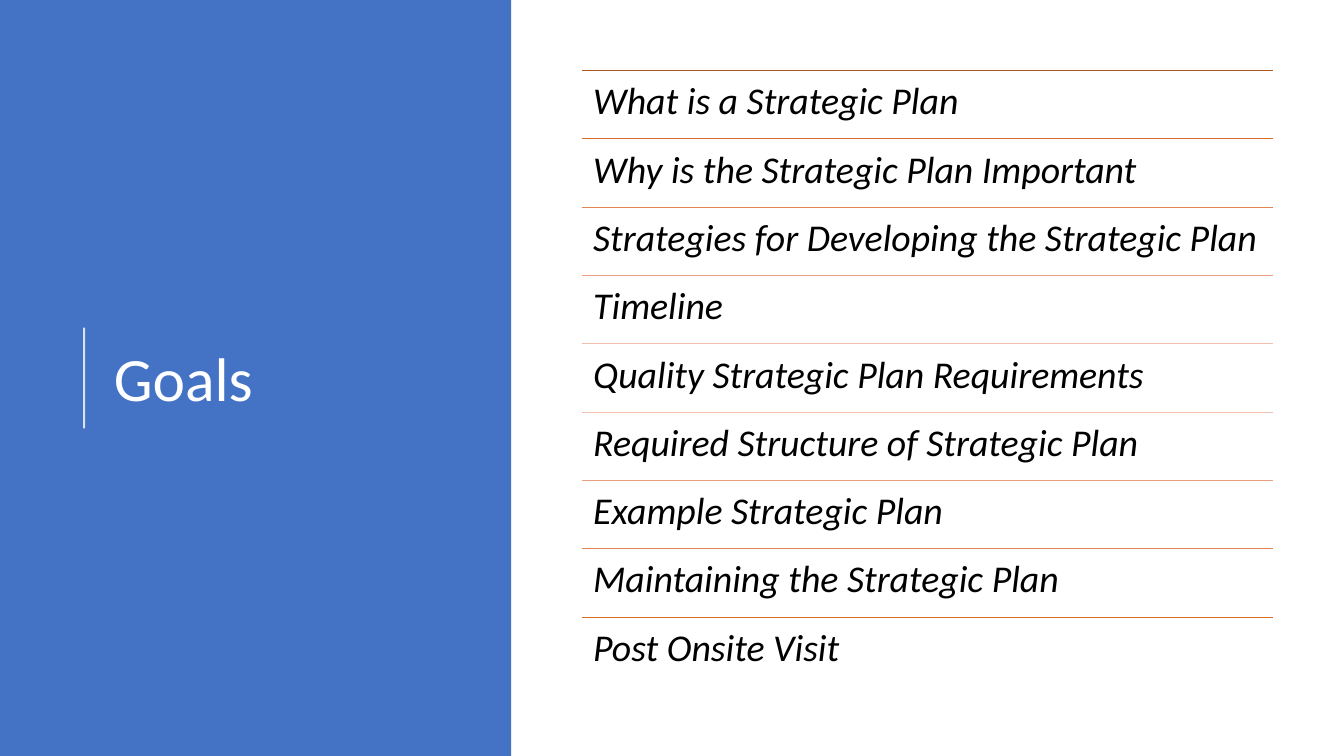
from dataclasses import dataclass

from lxml import etree
from pptx import Presentation
from pptx.dml.color import RGBColor
from pptx.enum.shapes import MSO_CONNECTOR, MSO_SHAPE
from pptx.enum.text import MSO_ANCHOR
from pptx.oxml.ns import qn
from pptx.util import Cm, Pt

STRAIGHT = MSO_CONNECTOR.STRAIGHT
RECTANGLE = MSO_SHAPE.RECTANGLE
TOP, MIDDLE = MSO_ANCHOR.TOP, MSO_ANCHOR.MIDDLE


@dataclass(frozen=True)
class Theme:
    font: str = "Calibri"
    panel: str = "4472C4"
    light: str = "FFFFFF"
    dark: str = "000000"
    dividers: tuple = ("AC5A20", "D76B2A", "E18454", "EAA080", "F3BFAD",
                       "F3BFAD", "EAA080", "E18454", "D76B2A")
    title_size: float = 44
    goal_size: float = 27


THEME = Theme()
SLIDE_WIDTH, SLIDE_HEIGHT = 33.87, 19.05
GOALS = (
    "What is a Strategic Plan",
    "Why is the Strategic Plan Important",
    "Strategies for Developing the Strategic Plan",
    "Timeline",
    "Quality Strategic Plan Requirements",
    "Required Structure of Strategic Plan",
    "Example Strategic Plan",
    "Maintaining the Strategic Plan",
    "Post Onsite Visit",
)


def add_text(slide, text, box, *, size, color, italic=False, anchor=TOP,
             insets=(0.25, 0.13)):
    """Place one paragraph in a box of (left, top, width, height) in cm."""
    frame = slide.shapes.add_textbox(*map(Cm, box)).text_frame
    frame.word_wrap = True
    frame.vertical_anchor = anchor
    frame.margin_left = frame.margin_right = Cm(insets[0])
    frame.margin_top = frame.margin_bottom = Cm(insets[1])
    paragraph = frame.paragraphs[0]
    paragraph.line_spacing = 0.9
    run = paragraph.add_run()
    run.text = text
    run.font.name = THEME.font
    run.font.size = Pt(size)
    run.font.italic = italic
    run.font.color.rgb = RGBColor.from_string(color)


def add_line(slide, start, end, color, width, opacity=100):
    line = slide.shapes.add_connector(STRAIGHT, *map(Cm, start + end))
    line.line.color.rgb = RGBColor.from_string(color)
    line.line.width = Pt(width)
    properties = line._element.spPr
    if opacity < 100:
        fill_color = properties.find(".//" + qn("a:srgbClr"))
        etree.SubElement(fill_color, qn("a:alpha"), val=str(opacity * 1000))
    etree.SubElement(properties, qn("a:effectLst"))


def add_title_panel(slide, title, box):
    left, top, width, height = box

    # Coloured background
    panel = slide.shapes.add_shape(RECTANGLE, *map(Cm, box))
    panel.shadow.inherit = False
    panel.fill.solid()
    panel.fill.fore_color.rgb = RGBColor.from_string(THEME.panel)
    panel.line.fill.background()

    # Accent rule, centred on the panel height
    rule_x, middle, half_rule = left + 2.12, top + height / 2, 1.27
    add_line(slide, (rule_x, middle + half_rule), (rule_x, middle - half_rule),
             THEME.light, 1.5, opacity=80)

    # Title
    add_text(slide, title, (left + 2.62, top + 1.98, width - 3.51, 15.29),
             size=THEME.title_size, color=THEME.light, anchor=MIDDLE)


def add_goal_list(slide, goals, box):
    left, top, width, height = box
    row_height = height / len(goals)
    for index, (goal, color) in enumerate(zip(goals, THEME.dividers)):
        row_top = top + index * row_height
        add_line(slide, (left, row_top), (left + width, row_top), color, 0.75)
        add_text(slide, goal, (left, row_top, width, row_height),
                 size=THEME.goal_size, color=THEME.dark, italic=True,
                 insets=(0.29, 0.29))


def main():
    presentation = Presentation()
    presentation.slide_width = Cm(SLIDE_WIDTH)
    presentation.slide_height = Cm(SLIDE_HEIGHT)
    slide = presentation.slides.add_slide(presentation.slide_layouts[6])
    add_title_panel(slide, "Goals", (0, 0, 12.88, SLIDE_HEIGHT))
    add_goal_list(slide, GOALS, (14.66, 1.78, 17.42, 15.49))
    presentation.save("out.pptx")


if __name__ == "__main__":
    main()
